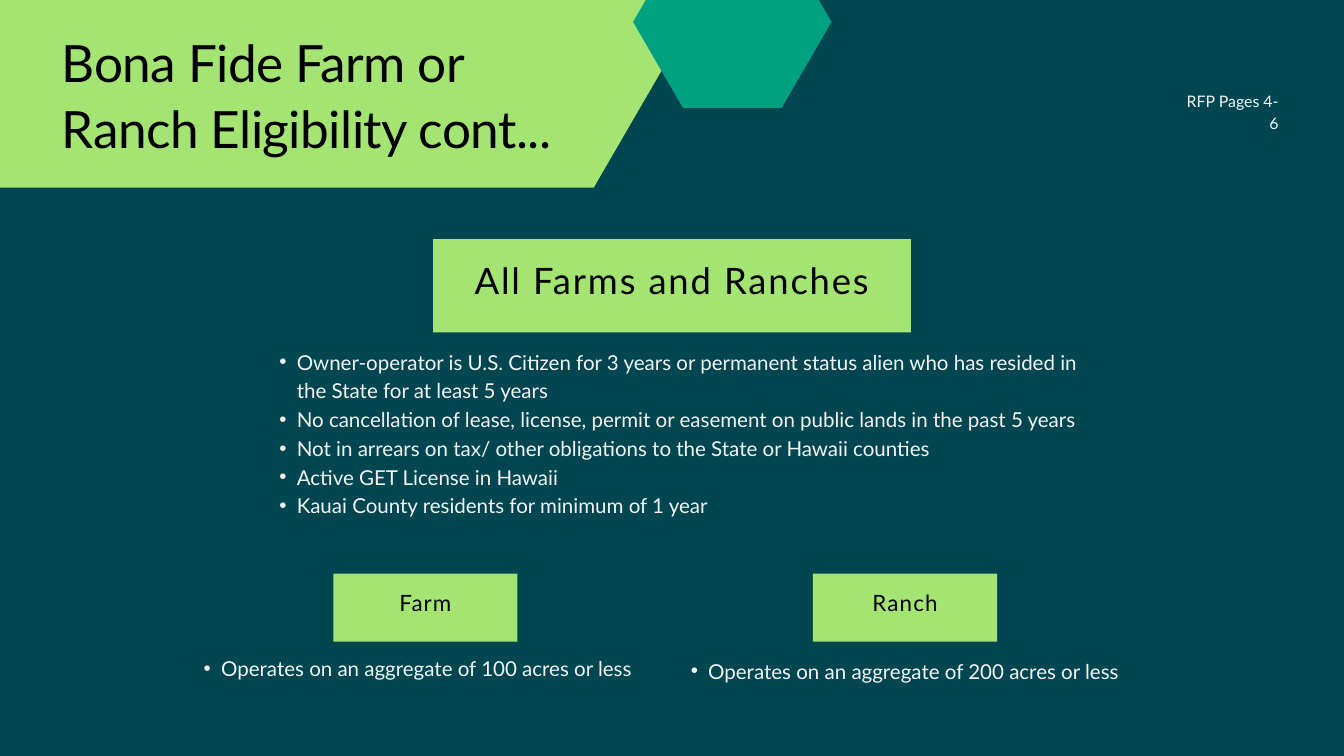
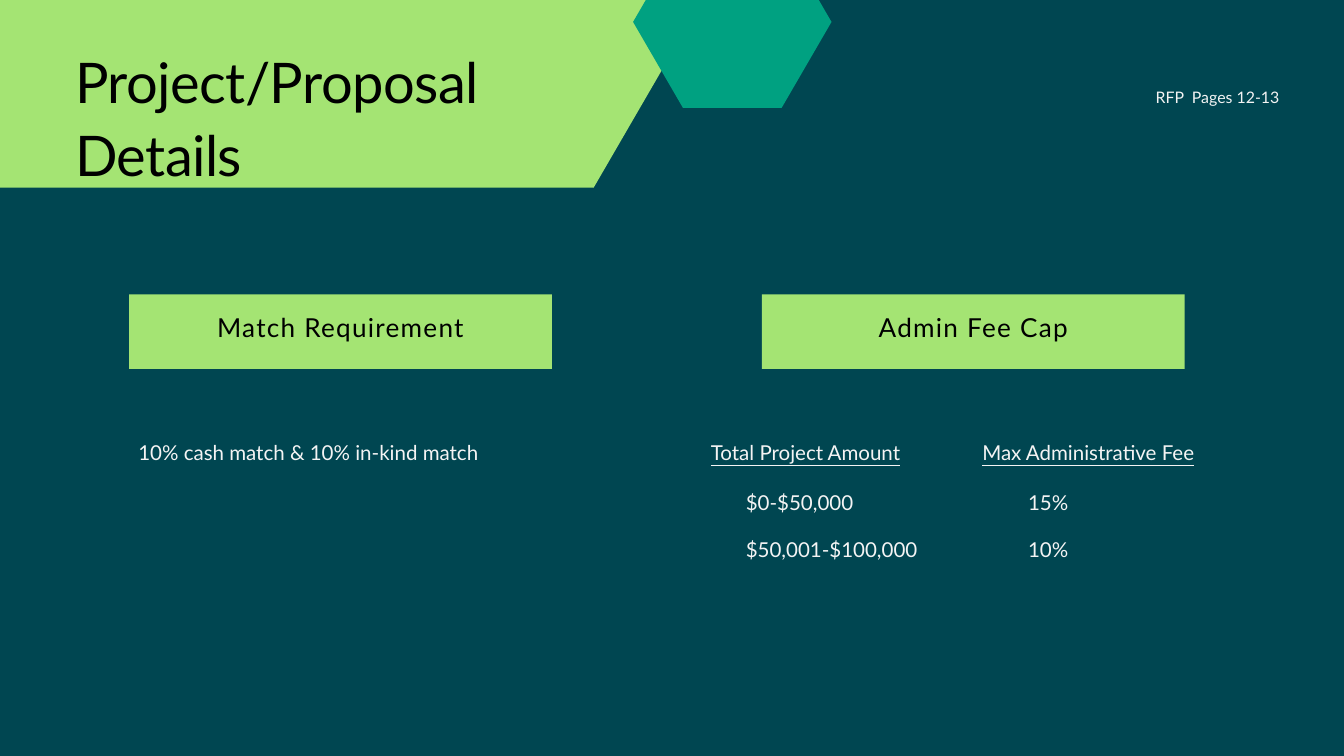
"""Builds two slides on farm and ranch eligibility and project proposal details."""
from pptx import Presentation
from pptx.dml.color import RGBColor
from pptx.enum import shapes, text
from pptx.oxml import parse_xml
from pptx.oxml.ns import nsdecls
from pptx.util import Cm, Pt

TEAL_DARK = RGBColor(0x00, 0x46, 0x51)
LIME = RGBColor(0xA4, 0xE4, 0x73)
GREEN = RGBColor(0x00, 0xA1, 0x81)
BLACK = RGBColor(0x00, 0x00, 0x00)
OFF_WHITE = RGBColor(0xF4, 0xF4, 0xF4)
FONT = "Lato"
BODY_SIZE = 22
LINE_HEIGHT = 1.4
HEADING_LINE_HEIGHT = 1.3
LEFT, CENTER, RIGHT = text.PP_ALIGN.LEFT, text.PP_ALIGN.CENTER, text.PP_ALIGN.RIGHT

HEXAGONS = [
    ((-8.1, -10.21, 35.56, 17.3), LIME),
    ((23.93, -2.42, 7.5, 6.5), GREEN),
]

ELIGIBILITY = {
    "title": ("Bona Fide Farm or Ranch Eligibility cont...", 55, (2.34, 0.97, 19.61, 5)),
    "pages": ("RFP Pages 4-6", (44.55, 3.33, 3.78, 0.81)),
    "headings": [
        ("All Farms and Ranches", 39, (16.37, 9.04, 18.06, 3.53), 0.1),
        ("Farm", 24, (12.6, 21.69, 6.96, 2.57), 0.25),
        ("Ranch", 24, (30.73, 21.69, 6.96, 2.57), 0.25),
    ],
    "bullets": [
        ([
            "Owner-operator is U.S. Citizen for 3 years or permanent status alien "
            "who has resided in the State for at least 5 years",
            "No cancellation of lease, license, permit or easement on public lands in the past 5 years",
            "Not in arrears on tax/ other obligations to the State or Hawaii counties",
            "Active GET License in Hawaii",
            "Kauai County residents for minimum of 1 year",
        ], (9.9, 13.06, 31, 7.57)),
        (["Operates on an aggregate of 100 acres or less"], (7.04, 24.66, 17.45, 1.07)),
        (["Operates on an aggregate of 200 acres or less"], (25.45, 24.74, 17.53, 1.07)),
    ],
}

PROPOSAL = {
    "title": ("Project/Proposal Details", 60, (2.84, 1.6, 18.42, 5.49)),
    "pages": ("RFP  Pages 12-13", (43.61, 3.18, 4.75, 0.81)),
    "headings": [
        ("Match Requirement", 28, (4.88, 11.13, 15.98, 2.82), 0.25),
        ("Admin Fee Cap", 28, (28.8, 11.13, 15.98, 2.82), 0.25),
    ],
}
MATCH = "10% cash match & 10% in-kind match"
FEE_COLUMNS = [
    ("Total Project Amount", 26.87, 28.19, ["$0-$50,000", "$50,001-$100,000"]),
    ("Max Administrative Fee", 37.13, 38.86, ["15%", "10%"]),
]
FEE_HEADER_TOP, FEE_FIRST_ROW, FEE_ROW_STEP = 16.48, 18.38, 1.75


def lengths(box):
    return [Cm(length) for length in box]


def write(frame, lines, size, color, align=LEFT, line_height=LINE_HEIGHT,
          tracking=0, underline=False, bullet=False):
    frame.word_wrap = True
    for index, line in enumerate(lines):
        paragraph = frame.paragraphs[0] if index == 0 else frame.add_paragraph()
        paragraph.alignment = align
        paragraph.line_spacing = Pt(round(size * line_height, 1))
        if bullet:
            properties = paragraph._p.get_or_add_pPr()
            properties.set("marL", str(Cm(1.32)))
            properties.set("indent", str(Cm(-0.66)))
            properties.append(parse_xml(f'<a:buFont {nsdecls("a")} typeface="Arial"/>'))
            properties.append(parse_xml(f'<a:buChar {nsdecls("a")} char="•"/>'))
        run = paragraph.add_run()
        run.text = line
        run.font.name, run.font.size = FONT, Pt(size)
        run.font.color.rgb = color
        if underline:
            run.font.underline = True
        if tracking:
            run._r.get_or_add_rPr().set("spc", str(round(size * tracking * 10) * 10))


def set_margins(frame, left=0, top=0, right=0, bottom=0):
    frame.margin_left, frame.margin_top = Cm(left), Cm(top)
    frame.margin_right, frame.margin_bottom = Cm(right), Cm(bottom)


def add_text(slide, lines, box, size=BODY_SIZE, **style):
    frame = slide.shapes.add_textbox(*lengths(box)).text_frame
    set_margins(frame)
    write(frame, lines, size, OFF_WHITE, **style)


def add_block(slide, kind, box, color):
    block = slide.shapes.add_shape(kind, *lengths(box))
    block.shadow.inherit = False
    block.fill.solid()
    block.fill.fore_color.rgb = color
    block.line.fill.background()
    return block


def add_heading(slide, label, size, box, top_margin):
    frame = add_block(slide, shapes.MSO_SHAPE.RECTANGLE, box, LIME).text_frame
    set_margins(frame, 0.71, top_margin, 0.71, 0.71)
    frame.vertical_anchor = text.MSO_ANCHOR.MIDDLE
    write(frame, [label], size, BLACK, CENTER, HEADING_LINE_HEIGHT, tracking=0.05)


def add_slide(deck, content):
    slide = deck.slides.add_slide(deck.slide_layouts[5])
    for box, color in HEXAGONS:
        hexagon = add_block(slide, shapes.MSO_SHAPE.HEXAGON, box, color)
        hexagon.adjustments[0] = 0.29

    wording, size, box = content["title"]
    title = slide.shapes.title
    title.left, title.top, title.width, title.height = lengths(box)
    frame = title.text_frame
    set_margins(frame)
    frame.vertical_anchor = text.MSO_ANCHOR.TOP
    frame.auto_size = text.MSO_AUTO_SIZE.NONE
    write(frame, [wording], size, BLACK, LEFT, HEADING_LINE_HEIGHT, tracking=-0.01)
    slide.shapes._spTree.append(title._element)

    pages, box = content["pages"]
    add_text(slide, [pages], box, 17, align=RIGHT)
    for heading in content["headings"]:
        add_heading(slide, *heading)
    return slide


def main():
    deck = Presentation()
    deck.slide_width, deck.slide_height = Cm(50.8), Cm(28.58)
    background = deck.slide_master.background.fill
    background.solid()
    background.fore_color.rgb = TEAL_DARK

    eligibility = add_slide(deck, ELIGIBILITY)
    for lines, box in ELIGIBILITY["bullets"]:
        add_text(eligibility, lines, box, bullet=True)

    proposal = add_slide(deck, PROPOSAL)
    add_text(proposal, [MATCH], (5.23, FEE_HEADER_TOP, 14.76, 1.07))
    for header, header_left, value_left, values in FEE_COLUMNS:
        add_text(proposal, [header], (header_left, FEE_HEADER_TOP, 8.7, 1.07), underline=True)
        for row, value in enumerate(values):
            top = FEE_FIRST_ROW + row * FEE_ROW_STEP
            add_text(proposal, [value], (value_left, top, 8.4, 1.07))

    deck.save("out.pptx")


if __name__ == "__main__":
    main()
